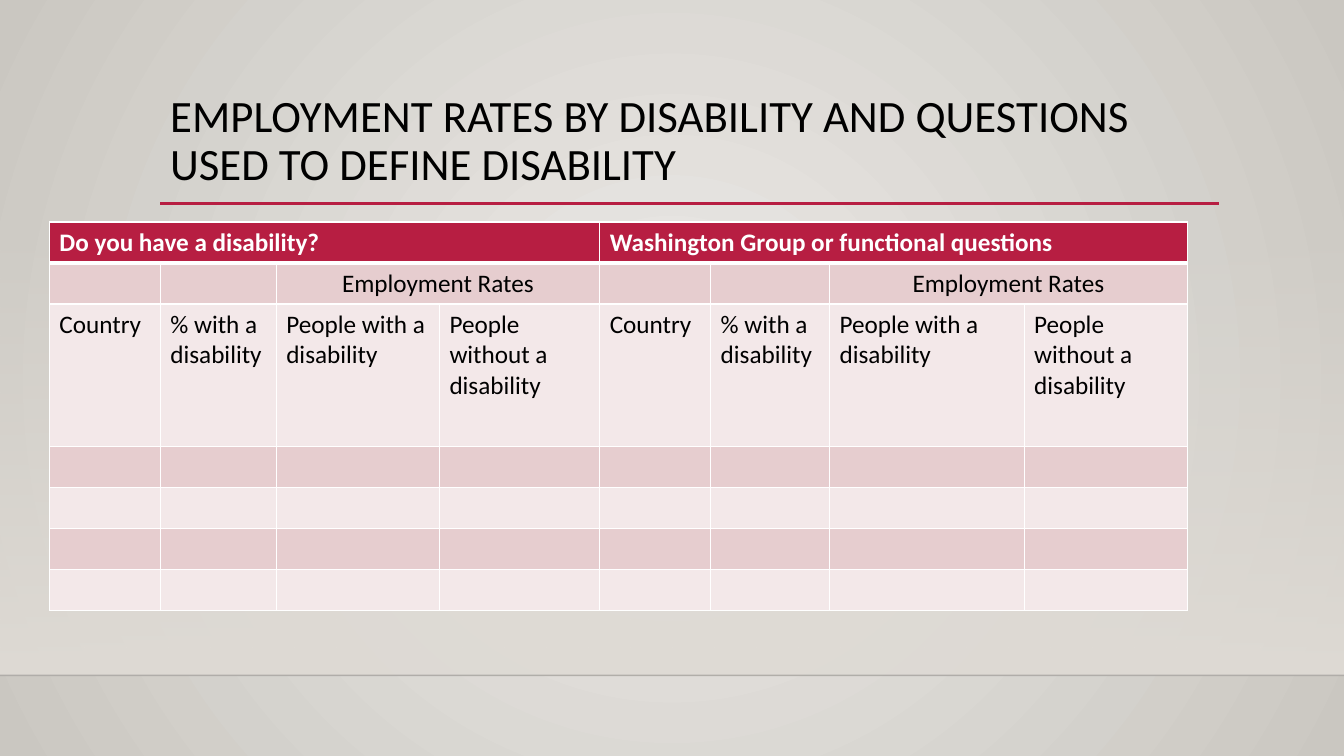
from lxml.etree import SubElement
from pptx import Presentation
from pptx.dml.color import RGBColor
from pptx.enum.shapes import MSO_CONNECTOR as Connector, MSO_SHAPE as Shape
from pptx.enum.text import MSO_ANCHOR as Anchor, PP_ALIGN as Align
from pptx.oxml.ns import qn
from pptx.util import Pt

FONT = "Calibri"
BLACK = RGBColor(0x00, 0x00, 0x00)
WHITE = RGBColor(0xFF, 0xFF, 0xFF)
CRIMSON = RGBColor(0xB7, 0x1E, 0x42)
ROSE = RGBColor(0xE6, 0xCD, 0xCF)
PALE_ROSE = RGBColor(0xF3, 0xE8, 0xE9)
CENTRE_GREY = RGBColor(0xEC, 0xEA, 0xE7)
EDGE_GREY = RGBColor(0xCA, 0xC7, 0xC1)
FLOOR_GREY = RGBColor(0xDF, 0xDB, 0xD5)
NEAR_BLACK = RGBColor(0x00, 0x00, 0x01)

SLIDE_W, SLIDE_H = 960, 540
FLOOR_Y = 482.4
COLUMN_WIDTHS = [79.2, 82.8, 116.6, 114.5, 79.2, 85, 139, 116.6]
ROW_HEIGHTS = [29.3, 29.3, 101.8] + [29.3] * 4
QUESTIONS = ["Do you have a disability?", "Washington Group or functional questions"]
HEADINGS = ["Country", "% with a disability",
            "People with a disability", "People without a disability"]


def add_color(parent, color, alpha=100):
    node = SubElement(parent, qn("a:srgbClr"), val=str(color))
    if alpha < 100:
        SubElement(node, qn("a:alpha"), val=str(alpha * 1000))


def set_gradient(fill, owner, stops, radial=False):
    """Fill owner with (position, color, alpha) stops, radial or downward."""
    fill.gradient()
    gradient = owner.find(".//" + qn("a:gradFill"))
    for child in list(gradient):
        gradient.remove(child)
    stop_list = SubElement(gradient, qn("a:gsLst"))
    for position, color, alpha in stops:
        stop = SubElement(stop_list, qn("a:gs"), pos=str(position * 1000))
        add_color(stop, color, alpha)
    if radial:
        circle = SubElement(gradient, qn("a:path"), {"path": "circle"})
        SubElement(circle, qn("a:fillToRect"), dict.fromkeys("ltrb", "50000"))
    else:
        SubElement(gradient, qn("a:lin"), ang="5400000", scaled="0")


def add_rule(slide, x1, x2, y, color, width, alpha=100):
    rule = slide.shapes.add_connector(Connector.STRAIGHT, Pt(x1), Pt(y), Pt(x2), Pt(y))
    rule.line.width = Pt(width)
    rule.line.color.rgb = color
    properties = rule._element.spPr
    if alpha < 100:
        solid = properties.find(".//" + qn("a:srgbClr"))
        SubElement(solid, qn("a:alpha"), val=str(alpha * 1000))
    SubElement(properties, qn("a:effectLst"))


def add_run(paragraph, text, size, color, bold=False):
    run = paragraph.add_run()
    run.text = text
    run.font.name = FONT
    run.font.size = Pt(size)
    run.font.bold = bold
    run.font.color.rgb = color


def add_title(slide, text):
    title = slide.shapes.add_textbox(Pt(114.5), Pt(63.4), Pt(756), Pt(82.8)).text_frame
    title.word_wrap = True
    title.vertical_anchor = Anchor.TOP
    title.paragraphs[0].line_spacing = 0.9
    add_run(title.paragraphs[0], text, 32, BLACK)


def set_borders(cell, top, bottom):
    properties = cell._tc.get_or_add_tcPr()
    for side, width in (("L", 1), ("R", 1), ("T", top), ("B", bottom)):
        line = SubElement(properties, qn(f"a:ln{side}"), w=str(Pt(width)))
        add_color(SubElement(line, qn("a:solidFill")), WHITE)


def write_cell(cell, text, color=BLACK, bold=False, align=Align.LEFT):
    paragraph = cell.text_frame.paragraphs[0]
    paragraph.alignment = align
    add_run(paragraph, text, 18, color, bold)


def add_rates_table(slide):
    rates = slide.shapes.add_table(
        len(ROW_HEIGHTS), len(COLUMN_WIDTHS), Pt(35.3), Pt(158.6),
        Pt(sum(COLUMN_WIDTHS)), Pt(sum(ROW_HEIGHTS))).table
    for column, width in zip(rates.columns, COLUMN_WIDTHS):
        column.width = Pt(width)
    for row, height in zip(rates.rows, ROW_HEIGHTS):
        row.height = Pt(height)

    # One half of the table per question
    for half, question in enumerate(QUESTIONS):
        first = half * len(HEADINGS)
        rates.cell(0, first).merge(rates.cell(0, first + 3))
        write_cell(rates.cell(0, first), question, WHITE, bold=True)
        rates.cell(1, first + 2).merge(rates.cell(1, first + 3))
        write_cell(rates.cell(1, first + 2), "Employment Rates", align=Align.CENTER)
        for offset, heading in enumerate(HEADINGS):
            write_cell(rates.cell(2, first + offset), heading)

    # Banded fills and white grid, heavier under the header
    for r, row in enumerate(rates.rows):
        band = CRIMSON if r == 0 else ROSE if r % 2 else PALE_ROSE
        for cell in row.cells:
            if not cell.is_spanned:
                set_borders(cell, 3 if r == 1 else 1, 3 if r == 0 else 1)
            cell.fill.solid()
            cell.fill.fore_color.rgb = band


def main():
    deck = Presentation()
    deck.slide_width, deck.slide_height = Pt(SLIDE_W), Pt(SLIDE_H)
    slide = deck.slides.add_slide(deck.slide_layouts[6])

    # Backdrop: radial glow, wall fading to the floor line
    set_gradient(slide.background.fill, slide.element,
                 [(0, CENTRE_GREY, 100), (100, EDGE_GREY, 100)], radial=True)
    wall = slide.shapes.add_shape(Shape.RECTANGLE, 0, Pt(159.1),
                                  Pt(SLIDE_W), Pt(FLOOR_Y - 159.1))
    wall.shadow.inherit = False
    wall.line.fill.background()
    set_gradient(wall.fill, wall._element.spPr,
                 [(0, FLOOR_GREY, 0), (100, FLOOR_GREY, 100)])
    add_rule(slide, 0, SLIDE_W, FLOOR_Y, NEAR_BLACK, 1, alpha=20)

    # Title and its underline
    add_rule(slide, 114.5, 871, 145.4, CRIMSON, 2.5)
    add_title(slide, "EMPLOYMENT RATES BY DISABILITY AND QUESTIONS "
                     "USED TO DEFINE DISABILITY")

    add_rates_table(slide)
    deck.save("out.pptx")


if __name__ == "__main__":
    main()
